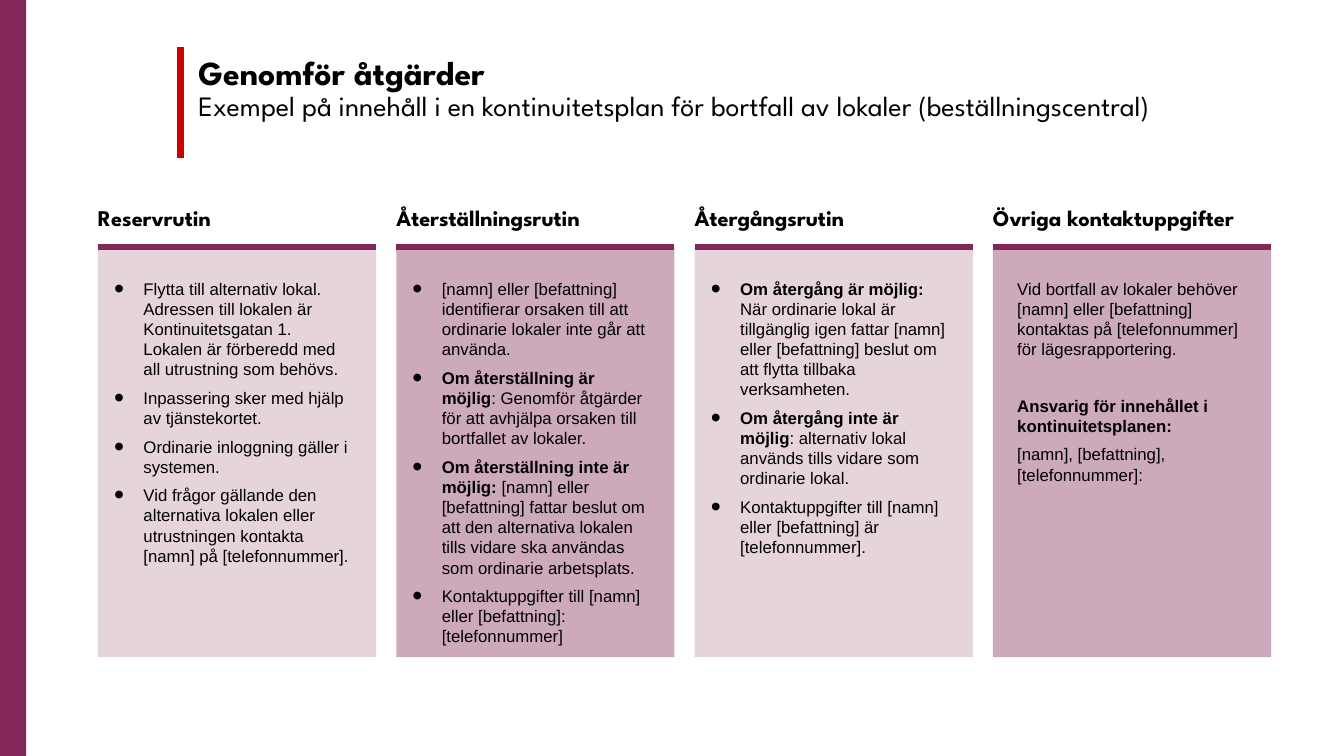
from lxml import etree
from pptx import Presentation
from pptx.dml.color import RGBColor
from pptx.enum.shapes import MSO_CONNECTOR, MSO_SHAPE
from pptx.enum.text import MSO_ANCHOR, MSO_AUTO_SIZE, PP_ALIGN
from pptx.oxml.ns import qn
from pptx.util import Pt

RECTANGLE = MSO_SHAPE.RECTANGLE
STRAIGHT = MSO_CONNECTOR.STRAIGHT
TOP, BOTTOM = MSO_ANCHOR.TOP, MSO_ANCHOR.BOTTOM
LEFT = PP_ALIGN.LEFT
FIXED_SIZE = MSO_AUTO_SIZE.NONE

PLUM = RGBColor(0x82, 0x27, 0x57)
LIGHT_PINK = RGBColor(0xE6, 0xD4, 0xDD)
DARK_PINK = RGBColor(0xCD, 0xA9, 0xBC)
RED = RGBColor(0xCC, 0x00, 0x00)
BLACK = RGBColor(0x00, 0x00, 0x00)

HEADING_FONT = "League Spartan"
BODY_FONT = "Arial"
HANGING = Pt(21)

SLIDE_WIDTH, SLIDE_HEIGHT = 960, 540
COLUMN_LEFT, COLUMN_TOP = 70, 145.5
COLUMN_WIDTH, COLUMN_GAP = 198.7, 14.4
HEADING_HEIGHT, RULE_OFFSET, PANEL_HEIGHT = 19.5, 31, 293

# Each paragraph is a pair: bold lead-in, regular text.
COLUMNS = [
    ("Reservrutin", [
        ("", "Flytta till alternativ lokal. Adressen till lokalen är Kontinuitetsgatan 1. "
             "Lokalen är förberedd med all utrustning som behövs."),
        ("", "Inpassering sker med hjälp av tjänstekortet."),
        ("", "Ordinarie inloggning gäller i systemen."),
        ("", "Vid frågor gällande den alternativa lokalen eller utrustningen kontakta "
             "[namn] på [telefonnummer]."),
    ]),
    ("Återställningsrutin", [
        ("", "[namn] eller [befattning] identifierar orsaken till att ordinarie lokaler "
             "inte går att använda."),
        ("Om återställning är möjlig",
         ": Genomför åtgärder för att avhjälpa orsaken till bortfallet av lokaler."),
        ("Om återställning inte är möjlig: ",
         "[namn] eller [befattning] fattar beslut om att den alternativa lokalen "
         "tills vidare ska användas som ordinarie arbetsplats."),
        ("", "Kontaktuppgifter till [namn] eller [befattning]: [telefonnummer]"),
    ]),
    ("Återgångsrutin", [
        ("Om återgång är möjlig: ",
         "När ordinarie lokal är tillgänglig igen fattar [namn] eller [befattning] "
         "beslut om att flytta tillbaka verksamheten."),
        ("Om återgång inte är möjlig",
         ": alternativ lokal används tills vidare som ordinarie lokal."),
        ("", "Kontaktuppgifter till [namn] eller [befattning] är [telefonnummer]."),
    ]),
    ("Övriga kontaktuppgifter", [
        ("", "Vid bortfall av lokaler behöver [namn] eller [befattning] kontaktas på "
             "[telefonnummer] för lägesrapportering."),
        ("Ansvarig för innehållet i kontinuitetsplanen:", ""),
        ("", "[namn], [befattning], [telefonnummer]:"),
    ]),
]


def set_font(font, name, size):
    font.name = name
    font.size = Pt(size)
    font.color.rgb = BLACK


def set_margins(frame, left, top, right, bottom):
    frame.margin_left, frame.margin_top = Pt(left), Pt(top)
    frame.margin_right, frame.margin_bottom = Pt(right), Pt(bottom)


def add_bullet(paragraph):
    properties = paragraph._p.get_or_add_pPr()
    properties.set("marL", str(HANGING))
    properties.set("indent", str(-HANGING))
    etree.SubElement(properties, qn("a:buSzPct")).set("val", "170000")
    etree.SubElement(properties, qn("a:buFont")).set("typeface", BODY_FONT)
    etree.SubElement(properties, qn("a:buChar")).set("char", "•")


def add_rectangle(slide, left, top, width, height, color):
    rectangle = slide.shapes.add_shape(
        RECTANGLE, Pt(left), Pt(top), Pt(width), Pt(height))
    rectangle.shadow.inherit = False
    rectangle.fill.solid()
    rectangle.fill.fore_color.rgb = color
    rectangle.line.fill.background()
    return rectangle


def add_rule(slide, x1, y1, x2, y2, color, weight):
    rule = slide.shapes.add_connector(STRAIGHT, Pt(x1), Pt(y1), Pt(x2), Pt(y2))
    rule.line.color.rgb = color
    rule.line.width = Pt(weight)
    etree.SubElement(rule._element.spPr, qn("a:effectLst"))


def add_title(slide, left, top, width, height):
    title = slide.shapes.title
    title.left, title.top = Pt(left), Pt(top)
    title.width, title.height = Pt(width), Pt(height)
    frame = title.text_frame
    frame.word_wrap = True
    frame.auto_size = FIXED_SIZE
    frame.vertical_anchor = TOP
    paragraph = frame.paragraphs[0]
    paragraph.alignment = LEFT
    paragraph.line_spacing = 0.9
    heading = paragraph.add_run()
    heading.text = "Genomför åtgärder"
    set_font(heading.font, HEADING_FONT, 24)
    heading.font.bold = True
    paragraph.add_line_break()
    subtitle = paragraph.add_run()
    subtitle.text = ("Exempel på innehåll i en kontinuitetsplan för bortfall av lokaler "
                     "(beställningscentral)")
    set_font(subtitle.font, HEADING_FONT, 20)
    add_rule(slide, left - 5.5, top - 3, left - 5.5, top + 76.5, RED, 5)


def add_heading(slide, text, left, top, width, height):
    heading = slide.shapes.add_textbox(Pt(left), Pt(top), Pt(width), Pt(height))
    frame = heading.text_frame
    frame.word_wrap = True
    frame.vertical_anchor = BOTTOM
    set_margins(frame, 0, 0, 14.4, 0)
    paragraph = frame.paragraphs[0]
    paragraph.text = text
    paragraph.space_after = Pt(6)
    set_font(paragraph.font, HEADING_FONT, 16)
    paragraph.font.bold = True


def fill_panel(frame, paragraphs, bulleted):
    frame.word_wrap = True
    frame.vertical_anchor = TOP
    set_margins(frame, 11.5 if bulleted else 17.3, 22.3, 17.3, 14.4)
    for number, (lead, text) in enumerate(paragraphs):
        paragraph = frame.paragraphs[0] if number == 0 else frame.add_paragraph()
        paragraph.alignment = LEFT
        paragraph.space_after = Pt(6)
        if bulleted:
            add_bullet(paragraph)
        elif lead:
            paragraph.space_before = Pt(20)
        set_font(paragraph.font, BODY_FONT, 12)
        for words, bold in ((lead, True), (text, False)):
            if words:
                run = paragraph.add_run()
                run.text = words
                run.font.bold = bold


def add_column(slide, heading, paragraphs, left, top, width, color, bulleted):
    """Place a heading, a rule and a text panel under each other."""
    rule_top = top + RULE_OFFSET
    panel = add_rectangle(slide, left, rule_top, width, PANEL_HEIGHT, color)
    fill_panel(panel.text_frame, paragraphs, bulleted)
    add_heading(slide, heading, left, top, width, HEADING_HEIGHT)
    add_rule(slide, left, rule_top, left + width, rule_top, PLUM, 4)


def main():
    presentation = Presentation()
    presentation.slide_width = Pt(SLIDE_WIDTH)
    presentation.slide_height = Pt(SLIDE_HEIGHT)
    slide = presentation.slides.add_slide(presentation.slide_layouts[5])
    add_rectangle(slide, 0, 0, 18.7, SLIDE_HEIGHT, PLUM)
    add_title(slide, 134.5, 36.7, 697, 77)
    for index, (heading, paragraphs) in enumerate(COLUMNS):
        left = COLUMN_LEFT + index * (COLUMN_WIDTH + COLUMN_GAP)
        color = DARK_PINK if index % 2 else LIGHT_PINK
        bulleted = index < len(COLUMNS) - 1
        add_column(slide, heading, paragraphs, left, COLUMN_TOP, COLUMN_WIDTH,
                   color, bulleted)
    presentation.save("out.pptx")


if __name__ == "__main__":
    main()
